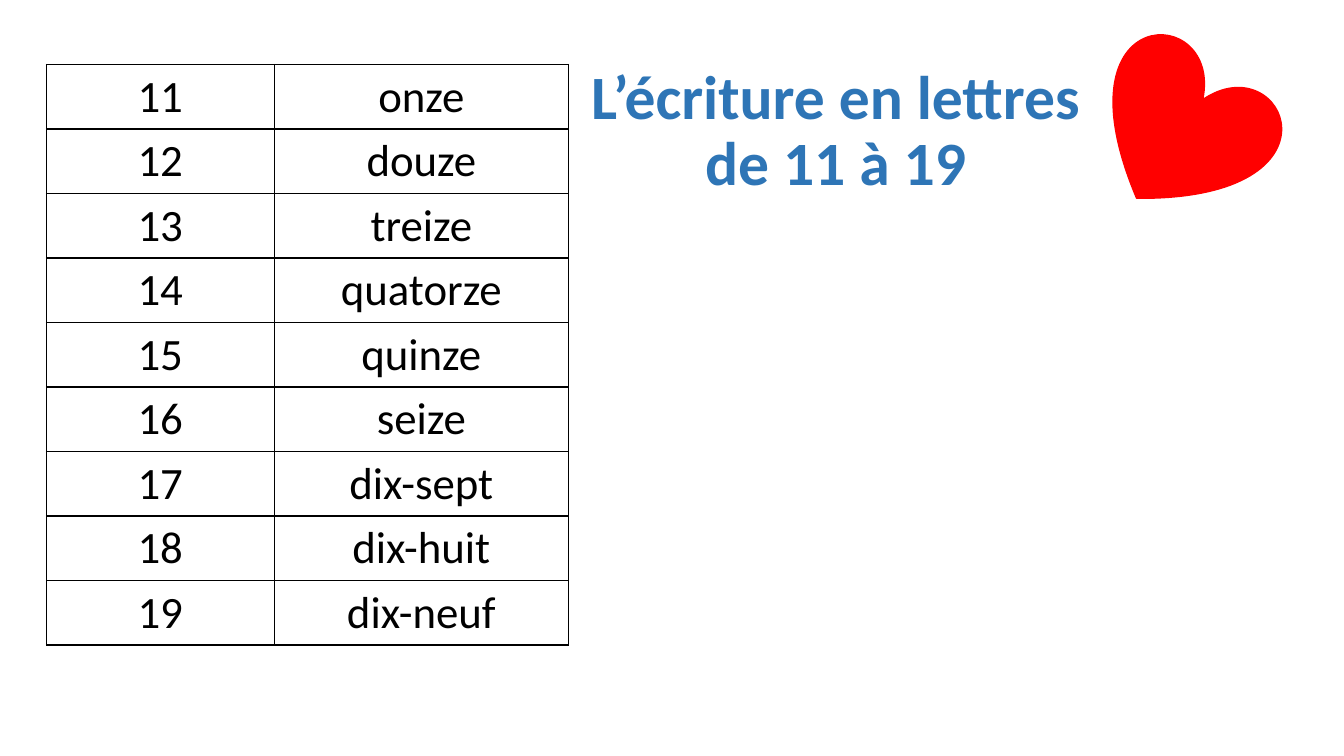
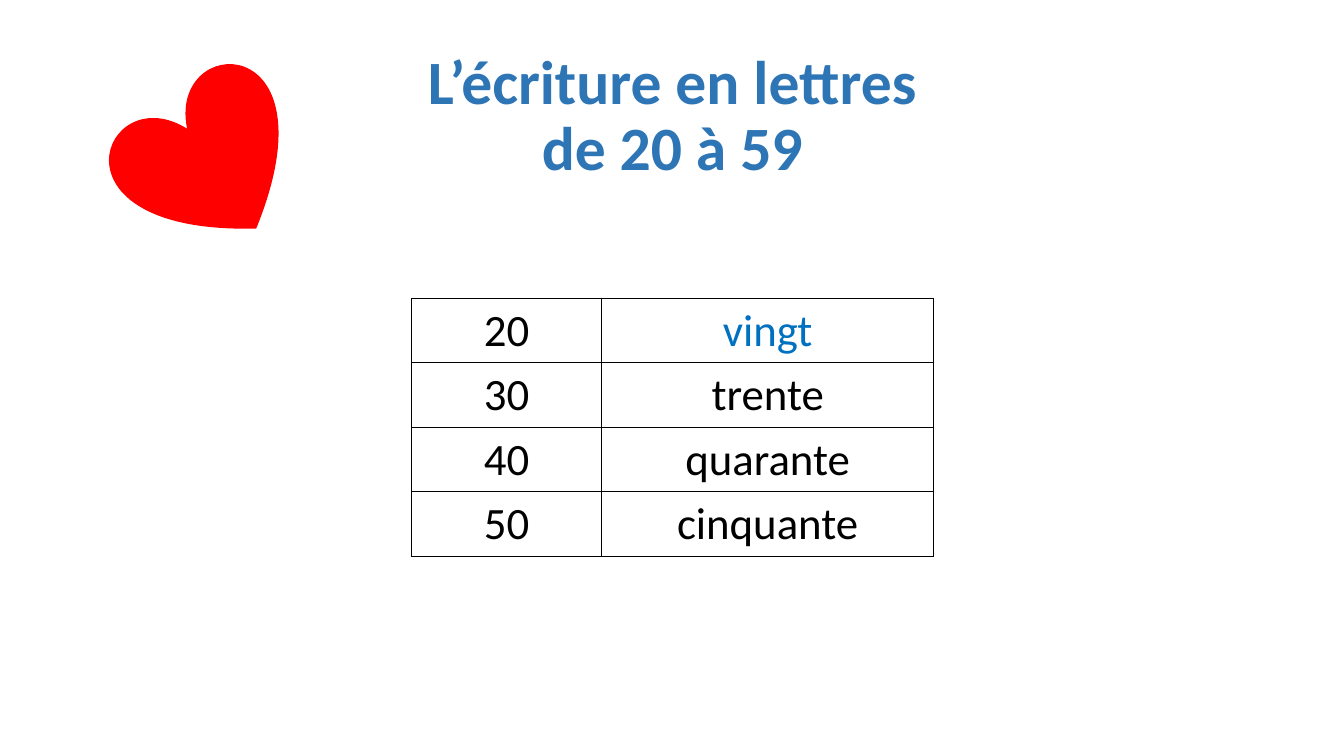
from pptx import Presentation
from pptx import util as u
from pptx.dml import color
from pptx.enum import shapes, text
from pptx.oxml import parse_xml
from pptx.oxml import ns

FONT = "Calibri"
BLACK, BLUE, TITLE_BLUE, RED = "000000", "0070C0", "2E75B6", "FF0000"
ROW_HEIGHT = 0.64


def rgb(value):
    return color.RGBColor.from_string(value)


class Deck:
    def __init__(self):
        self.prs = Presentation()
        self.prs.slide_width = u.Inches(13.33)
        self.prs.slide_height = u.Inches(7.5)
        self.s = None

    def slide(self):
        self.s = self.prs.slides.add_slide(self.prs.slide_layouts[6])

    def add_text(self, p, words, size, hue, bold=False):
        p.alignment = text.PP_ALIGN.CENTER
        r = p.add_run()
        r.text = words
        r.font.name = FONT
        r.font.size = u.Pt(size)
        r.font.bold = bold
        r.font.color.rgb = rgb(hue)

    def title(self, left, top, width, lines):
        sp = self.s.shapes.add_textbox(*map(u.Inches, (left, top, width, 1.45)))
        tf = sp.text_frame
        tf.word_wrap = True
        tf.vertical_anchor = text.MSO_ANCHOR.MIDDLE
        for i, line in enumerate(lines):
            p = tf.add_paragraph() if i else tf.paragraphs[0]
            p.line_spacing = 0.9
            self.add_text(p, line, 44, TITLE_BLUE, True)

    def heart(self, left, top, angle):
        sp = self.s.shapes.add_shape(
            shapes.MSO_SHAPE.HEART, *map(u.Inches, (left, top, 1.76, 1.57)))
        sp.rotation = angle
        sp.shadow.inherit = False
        sp.fill.solid()
        sp.fill.fore_color.rgb = rgb(RED)
        sp.line.color.rgb = rgb(RED)
        sp.line.width = u.Pt(1)

    def borders(self, cell):
        tcPr = cell._tc.get_or_add_tcPr()
        for side in "LRTB":
            tcPr.append(parse_xml(
                f'<a:ln{side} {ns.nsdecls("a")} w="{u.Pt(1)}"><a:solidFill>'
                f'<a:srgbClr val="{BLACK}"/></a:solidFill></a:ln{side}>'))

    def table(self, left, top, widths, first, step, words, hues):
        frame = self.s.shapes.add_table(
            len(words), 2, *map(u.Inches, (left, top, sum(widths), ROW_HEIGHT * len(words))))
        tbl = frame.table
        tbl.first_row = tbl.horz_banding = False
        for column, width in zip(tbl.columns, widths):
            column.width = u.Inches(width)
        for i, word in enumerate(words):
            tbl.rows[i].height = u.Inches(ROW_HEIGHT)
            for j, content in enumerate((str(first + i * step), word)):
                cell = tbl.cell(i, j)
                self.borders(cell)
                cell.fill.background()
                self.add_text(cell.text_frame.paragraphs[0], content, 32,
                              hues.get(content, BLACK))


def main():
    deck = Deck()

    deck.slide()
    deck.title(5.14, 0.59, 6.3, ("L’écriture en lettres", "de 11 à 19"))
    deck.table(0.46, 0.64, (2.26, 2.92), 11, 1,
               ("onze", "douze", "treize", "quatorze", "quinze", "seize",
                "dix-sept", "dix-huit", "dix-neuf"), {})
    deck.heart(10.83, 0.53, 33.8)

    deck.slide()
    deck.title(0.92, 0.44, 11.5, ("L’écriture en lettres", "de 20 à 59"))
    deck.heart(1.21, 0.83, 325.3)
    deck.table(4.08, 2.96, (1.89, 3.29), 20, 10,
               ("vingt", "trente", "quarante", "cinquante"), {"vingt": BLUE})

    deck.prs.save("out.pptx")


if __name__ == "__main__":
    main()
